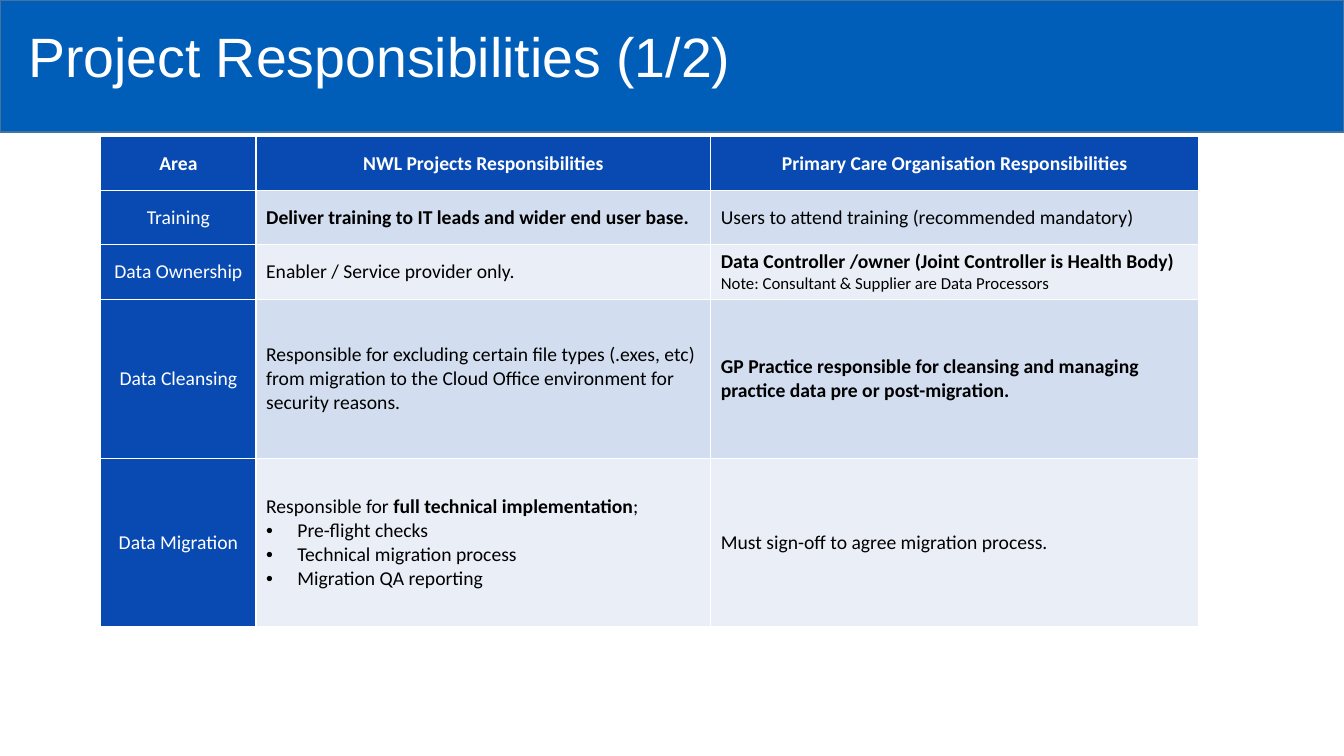
from lxml import etree
from pptx import Presentation
from pptx.dml.color import RGBColor
from pptx.enum.shapes import MSO_SHAPE
from pptx.enum.text import MSO_ANCHOR, MSO_AUTO_SIZE, PP_ALIGN
from pptx.oxml.ns import qn
from pptx.util import Inches, Pt

WHITE = RGBColor(0xFF, 0xFF, 0xFF)
BLACK = RGBColor(0x00, 0x00, 0x00)
BAND_BLUE = RGBColor(0x00, 0x5E, 0xB8)
BAND_EDGE = RGBColor(0x43, 0x73, 0x9E)
HEADING_BLUE = RGBColor(0x09, 0x4A, 0xB2)
ROW_FILLS = [RGBColor(0xD2, 0xDE, 0xEF), RGBColor(0xEA, 0xEF, 0xF7)]

COLUMN_WIDTHS = [1.54, 4.51, 4.84]
ROW_HEIGHTS = [0.54, 0.54, 0.54, 1.58, 1.67]
BULLET = "• "


def plain(text, size=14):
    """Return a paragraph of one regular run."""
    return [(text, False, size)]


def strong(text):
    """Return a paragraph of one bold run."""
    return [(text, True, 14)]


RESPONSIBILITIES = [
    [[strong("Area")],
     [strong("NWL Projects Responsibilities")],
     [strong("Primary Care Organisation Responsibilities")]],
    [[plain("Training")],
     [strong("Deliver training to IT leads and wider end user base.")],
     [plain("Users to attend training (recommended mandatory)")]],
    [[plain("Data Ownership")],
     [plain("Enabler / Service provider only.")],
     [strong("Data Controller /owner (Joint Controller is Health Body)"),
      plain("Note: Consultant & Supplier are Data Processors", 12)]],
    [[plain("Data Cleansing")],
     [plain("Responsible for excluding certain file types (.exes, etc) from "
            "migration to the Cloud Office environment for security reasons.")],
     [strong("GP Practice responsible for cleansing and managing practice "
             "data pre or post-migration.")]],
    [[plain("Data Migration")],
     [plain("Responsible for ") + strong("full technical implementation") + plain(";"),
      plain(BULLET + "Pre-flight checks"),
      plain(BULLET + "Technical migration process"),
      plain(BULLET + "Migration QA reporting")],
     [plain("Must sign-off to agree migration process.")]],
]


def add_run(para, text, font_name, size, color, bold=False):
    """Append one formatted run to a paragraph."""
    span = para.add_run()
    span.text = text
    span.font.name = font_name
    span.font.size = Pt(size)
    span.font.bold = bold
    span.font.color.rgb = color


def set_bullet(para):
    """Give a paragraph a hanging round bullet."""
    properties = para._p.get_or_add_pPr()
    properties.set("marL", str(Inches(0.31)))
    properties.set("indent", str(Inches(-0.31)))
    etree.SubElement(properties, qn("a:buFont")).set("typeface", "Arial")
    etree.SubElement(properties, qn("a:buChar")).set("char", BULLET.strip())


def add_header(page, left, top, width, height):
    """Place the blue band with the slide title on it."""
    band = page.shapes.add_shape(MSO_SHAPE.RECTANGLE, left, top, width, height)
    band.shadow.inherit = False
    band.fill.solid()
    band.fill.fore_color.rgb = BAND_BLUE
    band.line.color.rgb = BAND_EDGE
    band.line.width = Pt(1)

    title = page.shapes.title
    title.element.addprevious(band.element)
    title.left, title.top = left + Inches(0.18), top + Inches(0.17)
    title.width, title.height = Inches(7.61), Inches(0.85)
    frame = title.text_frame
    frame.word_wrap = True
    frame.auto_size = MSO_AUTO_SIZE.NONE
    frame.vertical_anchor = MSO_ANCHOR.MIDDLE
    para = frame.paragraphs[0]
    para.alignment = PP_ALIGN.LEFT
    para.line_spacing = 0.9
    add_run(para, "Project Responsibilities (1/2)", "Arial", 39.6, WHITE)


def fill_cell(cell, paragraphs, fill, color, alignment):
    """Write the paragraphs into a cell and colour it."""
    cell.fill.solid()
    cell.fill.fore_color.rgb = fill
    cell.vertical_anchor = MSO_ANCHOR.MIDDLE
    frame = cell.text_frame
    for number, runs in enumerate(paragraphs):
        para = frame.add_paragraph() if number else frame.paragraphs[0]
        para.alignment = alignment
        if runs[0][0].startswith(BULLET):
            set_bullet(para)
        for text, bold, size in runs:
            add_run(para, text.removeprefix(BULLET), "Calibri", size, color, bold)


def add_responsibilities(page, left, top, width, height):
    """Place the responsibilities table in the given box."""
    table = page.shapes.add_table(
        len(ROW_HEIGHTS), len(COLUMN_WIDTHS), left, top, width, height).table
    for column, share in zip(table.columns, COLUMN_WIDTHS):
        column.width = int(width * share / sum(COLUMN_WIDTHS))
    for row, share in zip(table.rows, ROW_HEIGHTS):
        row.height = int(height * share / sum(ROW_HEIGHTS))
    for r, cells in enumerate(RESPONSIBILITIES):
        for c, paragraphs in enumerate(cells):
            if r == 0 or c == 0:
                look = HEADING_BLUE, WHITE, PP_ALIGN.CENTER
            else:
                look = ROW_FILLS[(r - 1) % 2], BLACK, PP_ALIGN.LEFT
            fill_cell(table.cell(r, c), paragraphs, *look)


def main():
    """Build the deck and save it."""
    deck = Presentation()
    deck.slide_width, deck.slide_height = Inches(13.33), Inches(7.5)
    page = deck.slides.add_slide(deck.slide_layouts.get_by_name("Title Only"))
    add_header(page, 0, 0, deck.slide_width, Inches(1.31))
    add_responsibilities(page, Inches(1), Inches(1.35), Inches(10.89), Inches(4.87))
    deck.save("out.pptx")


if __name__ == "__main__":
    main()
